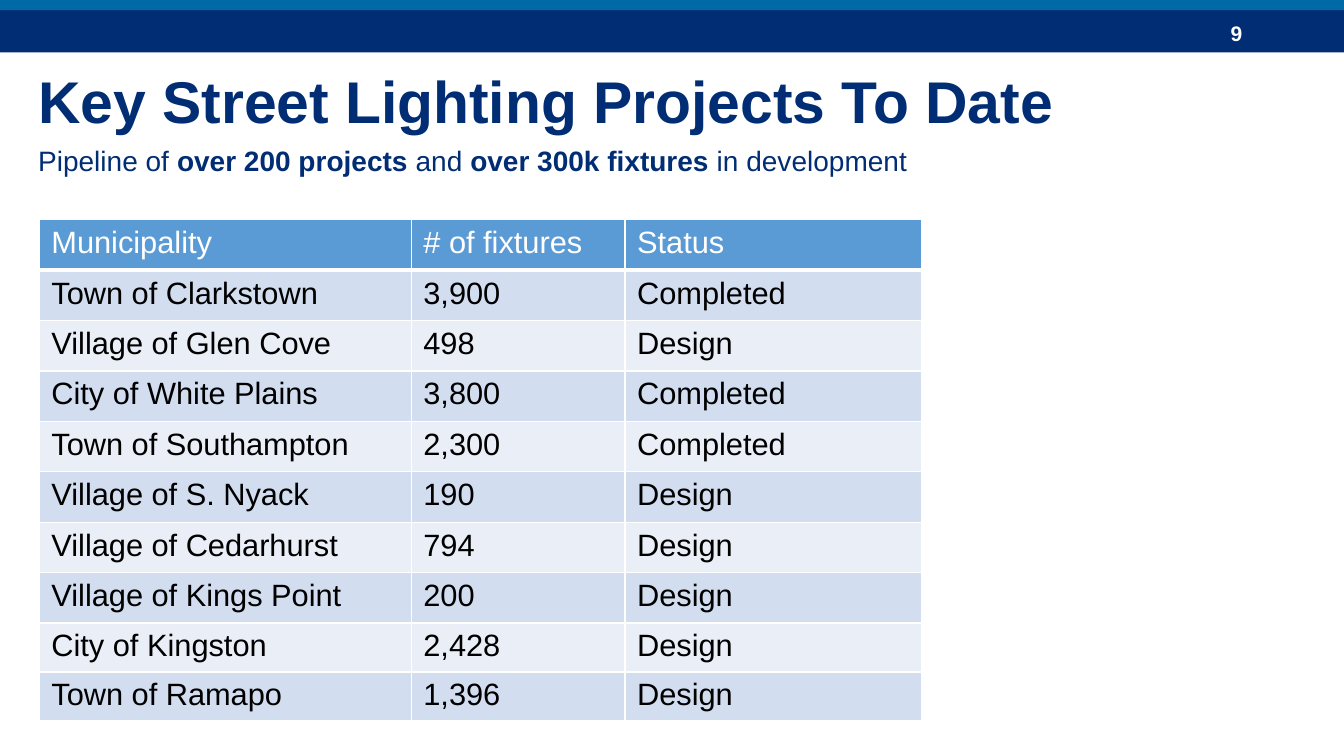
from lxml.etree import SubElement as Sub
from pptx import Presentation
from pptx.dml.color import RGBColor as RGB
from pptx.enum.shapes import MSO_SHAPE as Shape
from pptx.enum.text import MSO_ANCHOR as Anchor, MSO_AUTO_SIZE as Auto, PP_ALIGN as Align
from pptx.oxml.ns import qn
from pptx.util import Inches, Pt

NAVY = RGB(0x00, 0x2D, 0x73)
TEAL = RGB(0x00, 0x69, 0xA6)
WHITE = RGB(0xFF, 0xFF, 0xFF)
BLACK = RGB(0x00, 0x00, 0x00)
HEAD = RGB(0x5B, 0x9B, 0xD5)
BANDS = (RGB(0xEA, 0xEF, 0xF7), RGB(0xD2, 0xDE, 0xEF))

WIDE, HIGH = 13.33, 7.5
LEFT = 0.28
COLS = (3.69, 2.12, 2.94)
ROWS = (0.5,) * 8 + (0.47,) * 2

DATA = (
    ("Municipality", "# of fixtures", "Status"),
    ("Town of Clarkstown", "3,900", "Completed"),
    ("Village of Glen Cove", "498", "Design"),
    ("City of White Plains", "3,800", "Completed"),
    ("Town of Southampton", "2,300", "Completed"),
    ("Village of S. Nyack", "190", "Design"),
    ("Village of Cedarhurst", "794", "Design"),
    ("Village of Kings Point", "200", "Design"),
    ("City of Kingston", "2,428", "Design"),
    ("Town of Ramapo", "1,396", "Design"),
)
PITCH = (
    ("Pipeline of ", False),
    ("over 200 projects ", True),
    ("and ", False),
    ("over 300k fixtures ", True),
    ("in development", False),
)


def box(*sizes):
    return [Inches(size) for size in sizes]


def style(para, size, color, bold=None):
    font = para.font
    font.name, font.size, font.bold = "Arial", Pt(size), bold
    font.color.rgb = color


def add_bar(slide, top, tall, color):
    bar = slide.shapes.add_shape(Shape.RECTANGLE, *box(0, top, WIDE, tall))
    bar.shadow.inherit = False
    bar.fill.solid()
    bar.fill.fore_color.rgb = color
    bar.line.fill.background()


def add_text(slide, place, runs, size, color, bold=None):
    frame = slide.shapes.add_textbox(*box(*place)).text_frame
    frame.word_wrap = True
    para = frame.paragraphs[0]
    for text, strong in runs:
        run = para.add_run()
        run.text = text
        run.font.bold = strong
    style(para, size, color, bold)
    return para


def set_title(slide, text):
    title = slide.shapes.title
    title.left, title.top, title.width, title.height = box(LEFT, 0.56, WIDE - LEFT, 0.96)
    frame = title.text_frame
    frame.text = text
    frame.auto_size = Auto.NONE
    frame.vertical_anchor = Anchor.MIDDLE
    para = frame.paragraphs[0]
    para.alignment = Align.LEFT
    para.line_spacing = 0.9
    style(para, 42, NAVY, True)


def set_edges(cell, row):
    props = cell._tc.get_or_add_tcPr()
    thick = {"lnB": row == 0, "lnT": row == 1}
    for side in ("lnL", "lnR", "lnT", "lnB"):
        edge = Sub(props, qn(f"a:{side}"), w=str(Pt(3 if thick.get(side) else 1)))
        fill = Sub(edge, qn("a:solidFill"))
        Sub(fill, qn("a:srgbClr"), val=str(WHITE))


def fill_cell(cell, row, text):
    set_edges(cell, row)
    cell.margin_left = cell.margin_right = Inches(0.12)
    cell.margin_top = cell.margin_bottom = Inches(0.06)
    cell.fill.solid()
    cell.fill.fore_color.rgb = BANDS[row % 2] if row else HEAD
    cell.text = text
    style(cell.text_frame.paragraphs[0], 22, BLACK if row else WHITE, False)


def add_grid(slide, left, top):
    place = box(left, top, sum(COLS), sum(ROWS))
    grid = slide.shapes.add_table(len(ROWS), len(COLS), *place).table
    for col, wide in zip(grid.columns, COLS):
        col.width = Inches(wide)
    for row, tall in enumerate(ROWS):
        grid.rows[row].height = Inches(tall)
        for col, text in enumerate(DATA[row]):
            fill_cell(grid.cell(row, col), row, text)


def main():
    deck = Presentation()
    deck.slide_width, deck.slide_height = box(WIDE, HIGH)
    slide = deck.slides.add_slide(deck.slide_layouts[5])

    # Top band with page number
    add_bar(slide, 0.09, 0.43, NAVY)
    add_bar(slide, 0, 0.1, TEAL)
    page = add_text(slide, (11.68, 0.15, 0.74, 0.3), [("9", None)], 15, WHITE, True)
    page.alignment = Align.RIGHT

    # Title and subtitle
    set_title(slide, "Key Street Lighting Projects To Date")
    pitch = add_text(slide, (LEFT, 1.41, 11.41, 0.4), PITCH, 20, NAVY)
    pitch.line_spacing = 0.9

    # Project table
    add_grid(slide, 0.39, 2.18)

    deck.save("out.pptx")


if __name__ == "__main__":
    main()
